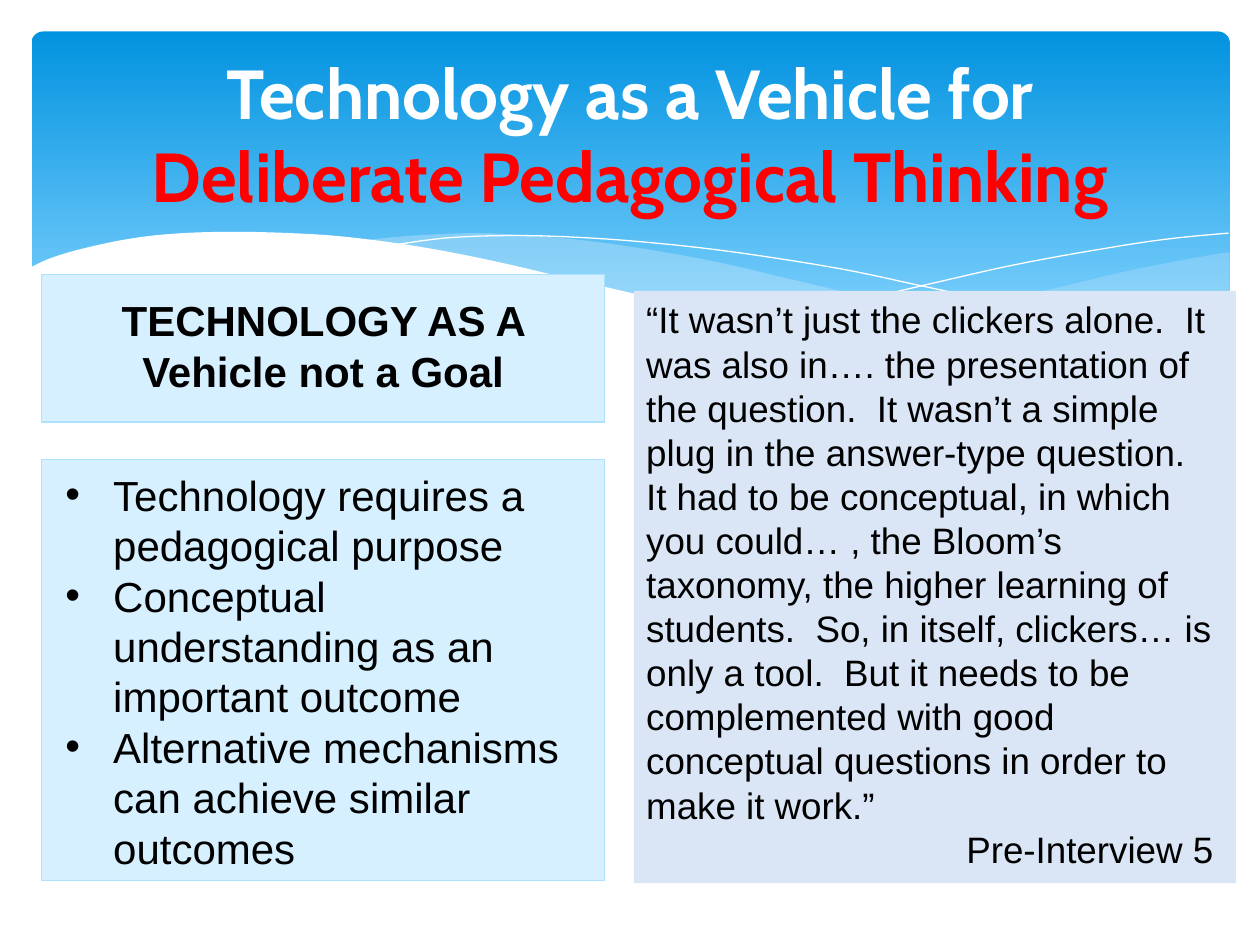
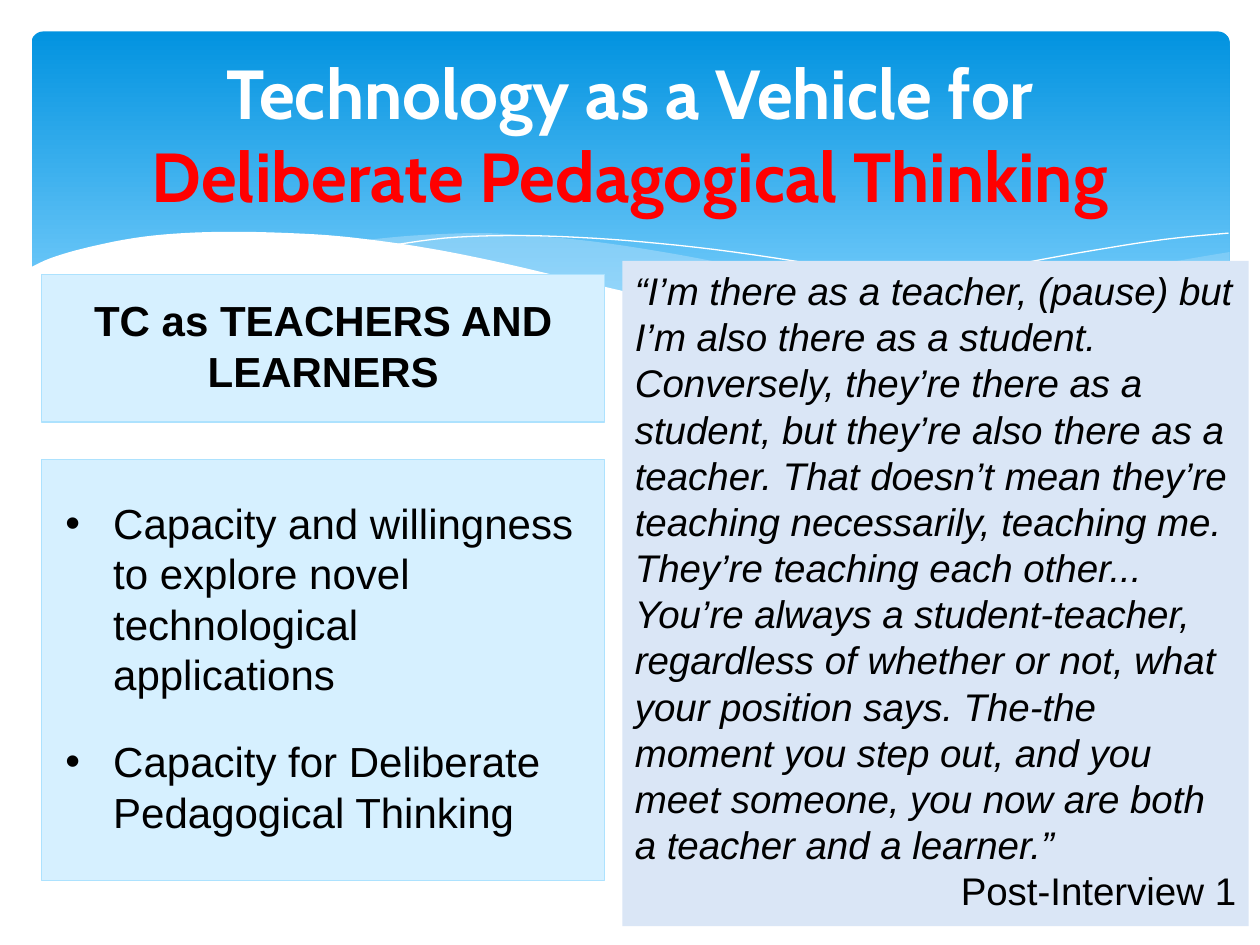
from collections import namedtuple

from lxml.etree import SubElement
from pptx import Presentation
from pptx.dml.color import RGBColor
from pptx.enum.shapes import MSO_SHAPE
from pptx.enum.text import MSO_ANCHOR, PP_ALIGN
from pptx.oxml.ns import qn
from pptx.util import Inches, Pt

COLORS = {
    "sky_top": "0293E0", "sky_bottom": "83D3FE", "wave": "C6E7FC",
    "panel": "D6F0FF", "panel_edge": "ADE2FE", "quote": "DAE6F6",
    "white": "FFFFFF", "ink": "000000", "accent": "FF0000",
}
TITLE_FONT, BODY_FONT = "Cabin", "Arial"
Box = namedtuple("Box", "left top width height")

HEADER = Box(0, 0, 10, 3.3)
HEADING = Box(0.33, 2.18, 4.47, 1.17)
POINTS = Box(0.33, 3.65, 4.47, 3.34)

RIGHT_WAVE_TOP = [(9.76, 2), (9.35, 2.07), (8.91, 2.16), (8.32, 2.3),
                  (7.79, 2.42), (7.29, 2.53), (6.61, 2.65)]
RIGHT_WAVE_BASE = [(6.61, 2.65), (7.05, 2.71), (7.57, 2.76), (8.03, 2.78),
                   (8.44, 2.77), (8.89, 2.72), (9.35, 2.62), (9.76, 2.47)]
MIDDLE_WAVE_TOP = [(8.93, 2.73), (8.37, 2.65), (7.75, 2.54), (7.06, 2.4),
                   (6.29, 2.22), (5.69, 2.08), (5.14, 1.98), (4.65, 1.91),
                   (4.2, 1.87), (3.8, 1.85), (3.28, 1.87), (2.86, 1.91)]
MIDDLE_WAVE_BASE = [(2.86, 1.91), (3.42, 1.99), (4.04, 2.11), (4.49, 2.22),
                    (5.3, 2.4), (6.01, 2.55), (6.65, 2.66), (7.22, 2.74),
                    (7.73, 2.77), (8.28, 2.78), (8.93, 2.73)]
FALLING_LINE = [(3.09, 1.95), (3.53, 1.89), (4.01, 1.87), (4.5, 1.88),
                (5.1, 1.92), (5.82, 2), (6.65, 2.13), (7.27, 2.26),
                (7.95, 2.41), (8.69, 2.61), (9.07, 2.72)]
RISING_LINE = [(6.13, 2.57), (6.72, 2.41), (7.48, 2.23), (8.06, 2.1),
               (8.66, 1.99), (9.24, 1.9), (9.75, 1.85)]
WHITE_CREST = [(9.77, 2.46), (9.3, 2.62), (8.75, 2.73), (8.09, 2.77),
               (7.44, 2.74), (6.88, 2.68), (6.26, 2.58), (5.55, 2.45),
               (5.03, 2.33), (4.47, 2.2), (3.91, 2.07), (3.4, 1.97),
               (2.92, 1.9), (2.5, 1.86), (1.93, 1.84), (1.46, 1.85),
               (1.06, 1.89), (0.67, 1.97), (0.4, 2.05), (0.23, 2.13)]
WHITE_BASE = [(0.23, 3.29), (9.77, 3.29)]

SLIDES = [
    {
        "heading": "TECHNOLOGY AS A Vehicle not a Goal",
        "points": ["Technology requires a pedagogical purpose",
                   "Conceptual understanding as an important outcome",
                   "Alternative mechanisms can achieve similar outcomes"],
        "points_inset": (0.01, 0),
        "point_gap": 0,
        "quote_box": Box(5.03, 2.31, 4.78, 4.7),
        "quote": "“It wasn’t just the clickers alone.  It was also in…. the "
                 "presentation of the question.  It wasn’t a simple plug in the "
                 "answer-type question.  It had to be conceptual, in which you "
                 "could… , the Bloom’s taxonomy, the higher learning of "
                 "students.  So, in itself, clickers… is only a tool.  But it "
                 "needs to be complemented with good conceptual questions in "
                 "order to make it work.”",
        "speaker": "Pre-Interview 5 ",
        "quote_size": 21,
        "quote_italic": False,
    },
    {
        "heading": "TC as TEACHERS AND LEARNERS",
        "points": ["Capacity and willingness to explore novel technological "
                   "applications",
                   "Capacity for Deliberate Pedagogical Thinking"],
        "points_inset": (0.23, 0.28),
        "point_gap": 21,
        "quote_box": Box(4.94, 2.07, 4.97, 5.28),
        "quote": "“I’m there as a teacher, (pause) but I’m also there as a "
                 "student. Conversely, they’re there as a student, but they’re "
                 "also there as a teacher. That doesn’t mean they’re teaching "
                 "necessarily, teaching me. They’re teaching each other... "
                 "You’re always a student-teacher, regardless of whether or "
                 "not, what your position says. The-the moment you step out, "
                 "and you meet someone, you now are both a teacher and a "
                 "learner.”",
        "speaker": "Post-Interview 1",
        "quote_size": 22,
        "quote_italic": True,
    },
]


def rgb(name):
    return RGBColor.from_string(COLORS[name])


def place(box):
    return [Inches(length) for length in box]


def smooth(points, steps=5):
    padded = [points[0], *points, points[-1]]
    curve = []
    for a, b, c, d in zip(padded, padded[1:], padded[2:], padded[3:]):
        for step in range(steps):
            t = step / steps
            curve.append(tuple(
                q + t * (r - p) / 2 + t * t * (2 * p - 5 * q + 4 * r - s) / 2
                + t ** 3 * (3 * q - p - 3 * r + s) / 2
                for p, q, r, s in zip(a, b, c, d)))
    return curve + [points[-1]]


def add_outline(page, box, points, fill=None, opacity=100):
    spots = [(Inches(box.left + x), Inches(box.top + y)) for x, y in points]
    builder = page.shapes.build_freeform(*spots[0])
    builder.add_line_segments(spots[1:], close=fill is not None)
    outline = builder.convert_to_shape()
    outline.shadow.inherit = False
    if fill is None:
        outline.fill.background()
        outline.line.color.rgb = rgb("white")
        outline.line.width = Pt(0)
        return
    outline.fill.solid()
    outline.fill.fore_color.rgb = rgb(fill)
    outline.line.fill.background()
    if opacity < 100:
        color = outline._element.spPr.find(qn("a:solidFill"))[0]
        SubElement(color, qn("a:alpha"), val=str(opacity * 1000))


def add_panel(page, box, fill, edge=None):
    panel = page.shapes.add_shape(MSO_SHAPE.RECTANGLE, *place(box))
    panel.shadow.inherit = False
    panel.fill.solid()
    panel.fill.fore_color.rgb = rgb(fill)
    if edge:
        panel.line.color.rgb = rgb(edge)
        panel.line.width = Pt(0.75)
    else:
        panel.line.fill.background()
    return panel


def prepare_frame(shape, anchor=MSO_ANCHOR.TOP):
    frame = shape.text_frame
    frame.word_wrap = True
    frame.vertical_anchor = anchor
    return frame


def add_span(para, text, size, color="ink", font=BODY_FONT, bold=False, italic=False):
    span = para.add_run()
    span.text = text
    span.font.size = Pt(size)
    span.font.name = font
    span.font.bold = bold
    span.font.italic = italic
    span.font.color.rgb = rgb(color)


def next_para(frame, index, align=PP_ALIGN.LEFT):
    para = frame.add_paragraph() if index else frame.paragraphs[0]
    para.alignment = align
    return para


def add_bullet(para):
    properties = para._p.get_or_add_pPr()
    properties.set("marL", str(Inches(0.38)))
    properties.set("indent", str(Inches(-0.38)))
    SubElement(properties, qn("a:buFont"), typeface=BODY_FONT)
    SubElement(properties, qn("a:buChar"), char="•")


def draw_header(page, box):
    sky_box = Box(box.left + 0.25, box.top + 0.25, 9.51, 2.7)
    sky = page.shapes.add_shape(MSO_SHAPE.ROUNDED_RECTANGLE, *place(sky_box))
    sky.adjustments[0] = 0.034
    sky.shadow.inherit = False
    sky.line.fill.background()
    sky.fill.gradient()
    sky.fill.gradient_angle = 270
    stops = zip(sky.fill.gradient_stops, (0, 0.9), ("sky_top", "sky_bottom"))
    for stop, position, color in stops:
        stop.position = position
        stop.color.rgb = rgb(color)

    add_outline(page, box, smooth(RIGHT_WAVE_TOP) + smooth(RIGHT_WAVE_BASE), "wave", 29)
    add_outline(page, box, smooth(MIDDLE_WAVE_TOP) + smooth(MIDDLE_WAVE_BASE), "wave", 40)
    add_outline(page, box, smooth(FALLING_LINE))
    add_outline(page, box, smooth(RISING_LINE))
    add_outline(page, box, smooth(WHITE_CREST) + WHITE_BASE, "white")


def draw_title(page, box):
    title_box = Box(box.left + 0.5, box.top + 0.37, 9, 1.37)
    frame = prepare_frame(page.shapes.add_textbox(*place(title_box)), MSO_ANCHOR.MIDDLE)
    para = next_para(frame, 0, PP_ALIGN.CENTER)
    for text, color in (("Technology as a Vehicle for ", "white"),
                        ("Deliberate Pedagogical Thinking", "accent")):
        add_span(para, text, 39.6, color, TITLE_FONT, bold=True)


def draw_heading(page, box, text):
    add_panel(page, box, "panel", "panel_edge")
    text_box = Box(box.left, box.top + 0.11, box.width, 1.31)
    frame = prepare_frame(page.shapes.add_textbox(*place(text_box)))
    add_span(next_para(frame, 0, PP_ALIGN.CENTER), text, 24, bold=True)


def draw_points(page, box, points, inset, gap):
    add_panel(page, box, "panel", "panel_edge")
    above, below = inset
    text_box = Box(box.left + 0.09, box.top + above, 4.32, box.height - above - below)
    frame = prepare_frame(page.shapes.add_textbox(*place(text_box)), MSO_ANCHOR.MIDDLE)
    for index, text in enumerate(points):
        para = next_para(frame, index)
        para.space_before = Pt(gap if index else 0)
        add_bullet(para)
        add_span(para, text, 24)


def draw_quote(page, box, quote, speaker, size, italic):
    frame = prepare_frame(add_panel(page, box, "quote"))
    add_span(next_para(frame, 0), quote, size, italic=italic)
    add_span(next_para(frame, 1, PP_ALIGN.RIGHT), speaker, size)


def draw_slide(deck, content):
    page = deck.slides.add_slide(deck.slide_layouts[6])
    draw_header(page, HEADER)
    draw_points(page, POINTS, content["points"], content["points_inset"],
                content["point_gap"])
    draw_heading(page, HEADING, content["heading"])
    draw_title(page, HEADER)
    draw_quote(page, content["quote_box"], content["quote"], content["speaker"],
               content["quote_size"], content["quote_italic"])


def main():
    deck = Presentation()
    deck.slide_width, deck.slide_height = Inches(10), Inches(7.5)
    for content in SLIDES:
        draw_slide(deck, content)
    deck.save("out.pptx")


if __name__ == "__main__":
    main()
